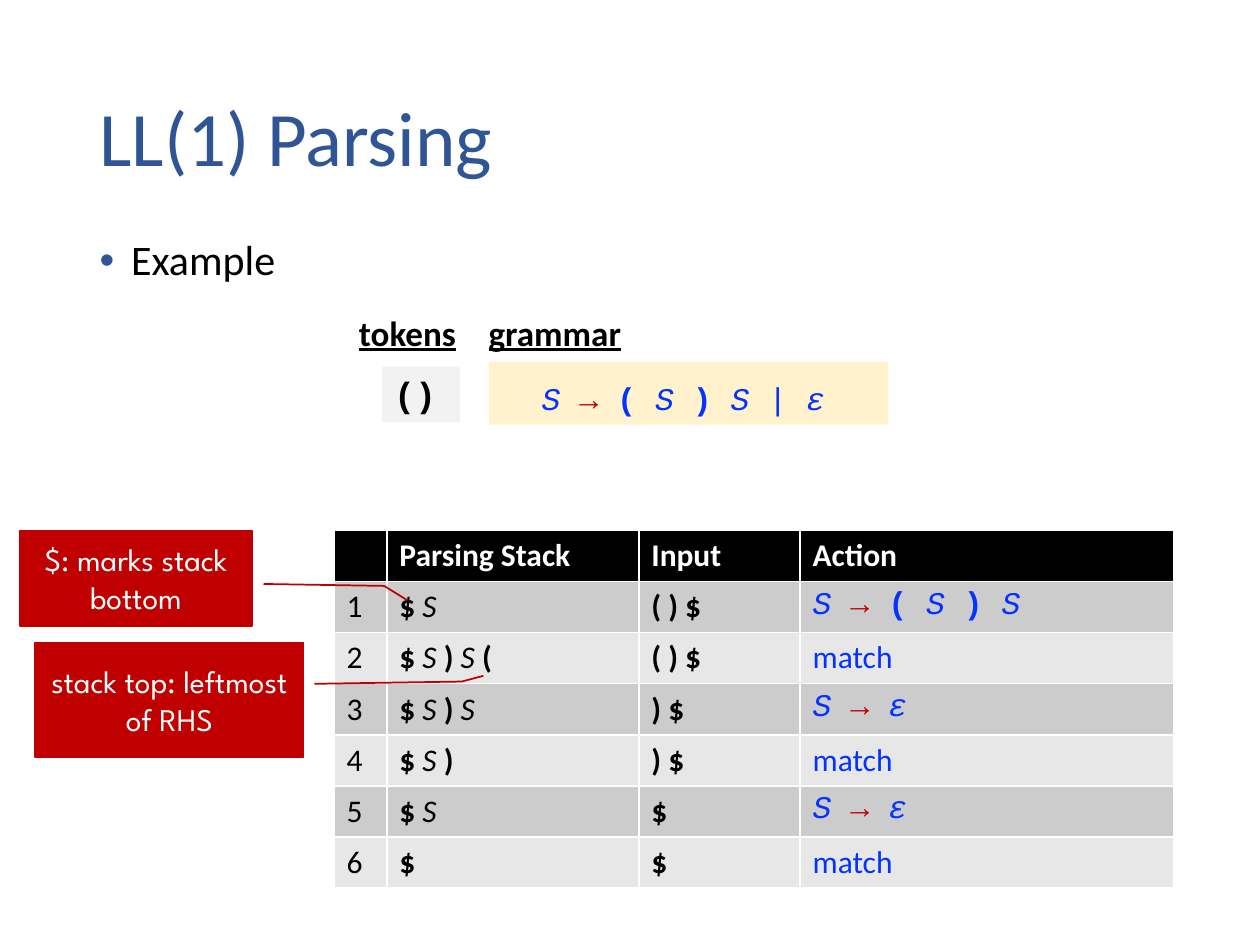
import pptx
import pptx.dml.color
import pptx.enum.shapes
import pptx.enum.text
import pptx.oxml.ns
import pptx.util
from lxml import etree

COLUMNS, ROWS = 100, 75
UNIT = pptx.util.Inches(10) // COLUMNS
BLUE, RED, NAVY = "0432FF", "C00000", "2F5597"
BLACK, WHITE = "000000", "FFFFFF"
BODY_FONT, CODE_FONT, NOTE_FONT = "Calibri", "Courier New", "League Spartan"
RECTANGLE = pptx.enum.shapes.MSO_SHAPE.RECTANGLE
CALLOUT = pptx.enum.shapes.MSO_SHAPE.LINE_CALLOUT_2
MIDDLE = pptx.enum.text.MSO_ANCHOR.MIDDLE
LEFT, CENTER = pptx.enum.text.PP_ALIGN.LEFT, pptx.enum.text.PP_ALIGN.CENTER
STEPS = [
    ("$ S", "( ) $", "S → ( S ) S"),
    ("$ S ) S (", "( ) $", "match"),
    ("$ S ) S", ") $", "S → ε"),
    ("$ S )", ") $", "match"),
    ("$ S", "$", "S → ε"),
    ("$", "$", "match"),
]


def color(code):
    """Turn a hex string into a colour."""
    return pptx.dml.color.RGBColor.from_string(code)


def grid(*cells):
    """Turn grid cells into slide lengths."""
    return [round(cell * UNIT) for cell in cells]


def fill(item, code):
    """Fill a shape or table cell with one colour."""
    item.fill.solid()
    item.fill.fore_color.rgb = color(code)


def style(para, size, code, font=BODY_FONT, bold=False, underline=False):
    """Set the font of a whole paragraph."""
    para.font.size = pptx.util.Pt(size)
    para.font.color.rgb = color(code)
    para.font.name = font
    para.font.bold = bold
    para.font.underline = underline


def write_symbols(para, text):
    """Write grammar symbols: terminals bold, the rest of the grammar italic."""
    symbols = text.split()
    for index, symbol in enumerate(symbols):
        span = para.add_run()
        span.text = symbol + (" " if index < len(symbols) - 1 else "")
        if symbol in ("S", "ε"):
            span.font.italic = True
        elif symbol in ("$", "(", ")"):
            span.font.bold = True
        elif symbol == "→":
            span.font.color.rgb = color(RED)


def fill_placeholder(box, area, text, size, code):
    """Move a placeholder and give it one line of text."""
    box.left, box.top, box.width, box.height = grid(*area)
    box.text_frame.text = text
    para = box.text_frame.paragraphs[0]
    para.alignment = LEFT
    para.line_spacing = 0.9
    style(para, size, code)
    return para


def add_bullet(para, code):
    """Give a paragraph a coloured round bullet with a hanging indent."""
    para.space_before = pptx.util.Pt(10)
    properties = para._p.get_or_add_pPr()
    indent = pptx.util.Inches(0.25)
    properties.set("marL", str(indent))
    properties.set("indent", str(-indent))
    name = pptx.oxml.ns.qn
    bullet_color = etree.SubElement(properties, name("a:buClr"))
    etree.SubElement(bullet_color, name("a:srgbClr"), val=code)
    etree.SubElement(properties, name("a:buChar"), char="•")


def add_text(page, area, wrap=True):
    """Add a text box and return its first paragraph."""
    box = page.shapes.add_textbox(*grid(*area))
    box.text_frame.word_wrap = wrap
    return box.text_frame.paragraphs[0]


def add_heading(page, area, text):
    """Add a bold underlined heading."""
    para = add_text(page, area, wrap=False)
    para.text = text
    style(para, 20, BLACK, bold=True, underline=True)


def add_panel(page, kind, area, code):
    """Add a filled shape without outline or shadow."""
    panel = page.shapes.add_shape(kind, *grid(*area))
    panel.shadow.inherit = False
    fill(panel, code)
    panel.line.fill.background()
    return panel


def add_callout(page, area, text, bends):
    """Add a red note whose bent line points into the table."""
    note = add_panel(page, CALLOUT, area, RED)
    note.line.color.rgb = color(RED)
    note.line.width = pptx.util.Pt(1)
    for index, bend in enumerate(bends):
        note.adjustments[index] = bend
    note.text_frame.text = text
    note.text_frame.word_wrap = True
    note.text_frame.vertical_anchor = MIDDLE
    para = note.text_frame.paragraphs[0]
    para.alignment = CENTER
    style(para, 18, WHITE, NOTE_FONT)


def add_steps(page, area, widths):
    """Add the table of parsing steps."""
    rows = [("", "Parsing Stack", "Input", "Action")]
    rows += [(str(number), *step) for number, step in enumerate(STEPS, 1)]
    table = page.shapes.add_table(len(rows), len(widths), *grid(*area)).table
    for column, width in zip(table.columns, grid(*widths)):
        column.width = width
    for row, texts in enumerate(rows):
        for column, text in enumerate(texts):
            cell = table.cell(row, column)
            para = cell.text_frame.paragraphs[0]
            if row == 0:
                fill(cell, BLACK)
                para.text = text
                style(para, 18, WHITE, bold=True)
                continue
            fill(cell, "CCCCCC" if row % 2 else "E7E7E7")
            is_action = column == len(texts) - 1
            font = CODE_FONT if is_action and "→" in text else BODY_FONT
            style(para, 18, BLUE if is_action else BLACK, font)
            write_symbols(para, text)


def main():
    """Build the slide and save it."""
    deck = pptx.Presentation()
    deck.slide_width, deck.slide_height = grid(COLUMNS, ROWS)
    page = deck.slides.add_slide(deck.slide_layouts[1])
    title, body = page.placeholders
    fill_placeholder(title, (6.9, 4, 86.2, 14.5), "LL(1) Parsing", 44, NAVY)
    title.text_frame.vertical_anchor = MIDDLE
    item = fill_placeholder(body, (6.9, 18.5, 93.1, 11.4), "Example", 24, BLACK)
    add_bullet(item, NAVY)

    tokens = add_panel(page, RECTANGLE, (30.3, 29.1, 6.2, 4.4), "F2F2F2")
    tokens.text_frame.text = "()"
    tokens.text_frame.vertical_anchor = pptx.enum.text.MSO_ANCHOR.TOP
    para = tokens.text_frame.paragraphs[0]
    para.alignment = LEFT
    style(para, 20, BLACK, CODE_FONT, bold=True)

    add_panel(page, RECTANGLE, (38.8, 28.7, 31.7, 5), "FFF2CC")
    grammar = add_text(page, (42, 29.3, 28.5, 4.3))
    grammar.line_spacing = 1.1
    style(grammar, 18, BLUE, CODE_FONT)
    write_symbols(grammar, "S → ( S ) S | ε")

    add_steps(page, (26.5, 42.1, 66.7, 28.4), (4.2, 20, 12.8, 29.7))
    add_callout(page, (2.8, 51, 21.3, 9.1), "stack top: leftmost of RHS",
                (0.36, 1.04, 0.34, 1.59, 0.29, 1.67))
    add_callout(page, (1.6, 42.1, 18.4, 7.6), "$: marks stack bottom",
                (0.56, 1.05, 0.58, 1.57, 0.73, 1.67))
    add_heading(page, (27.5, 24.2, 9.8, 4.4), "tokens")
    add_heading(page, (37.8, 24.2, 12.6, 4.4), "grammar")
    deck.save("out.pptx")


if __name__ == "__main__":
    main()
